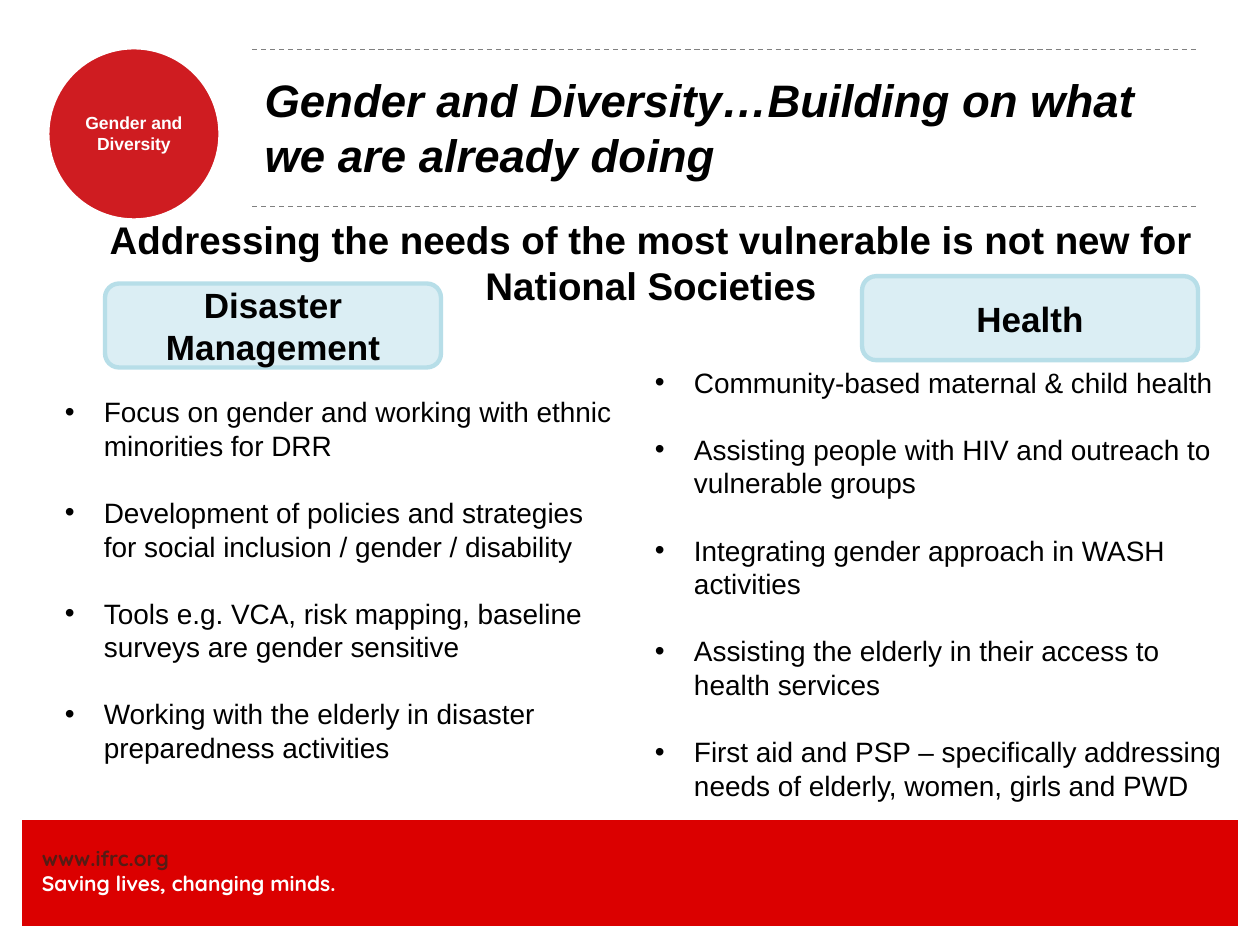
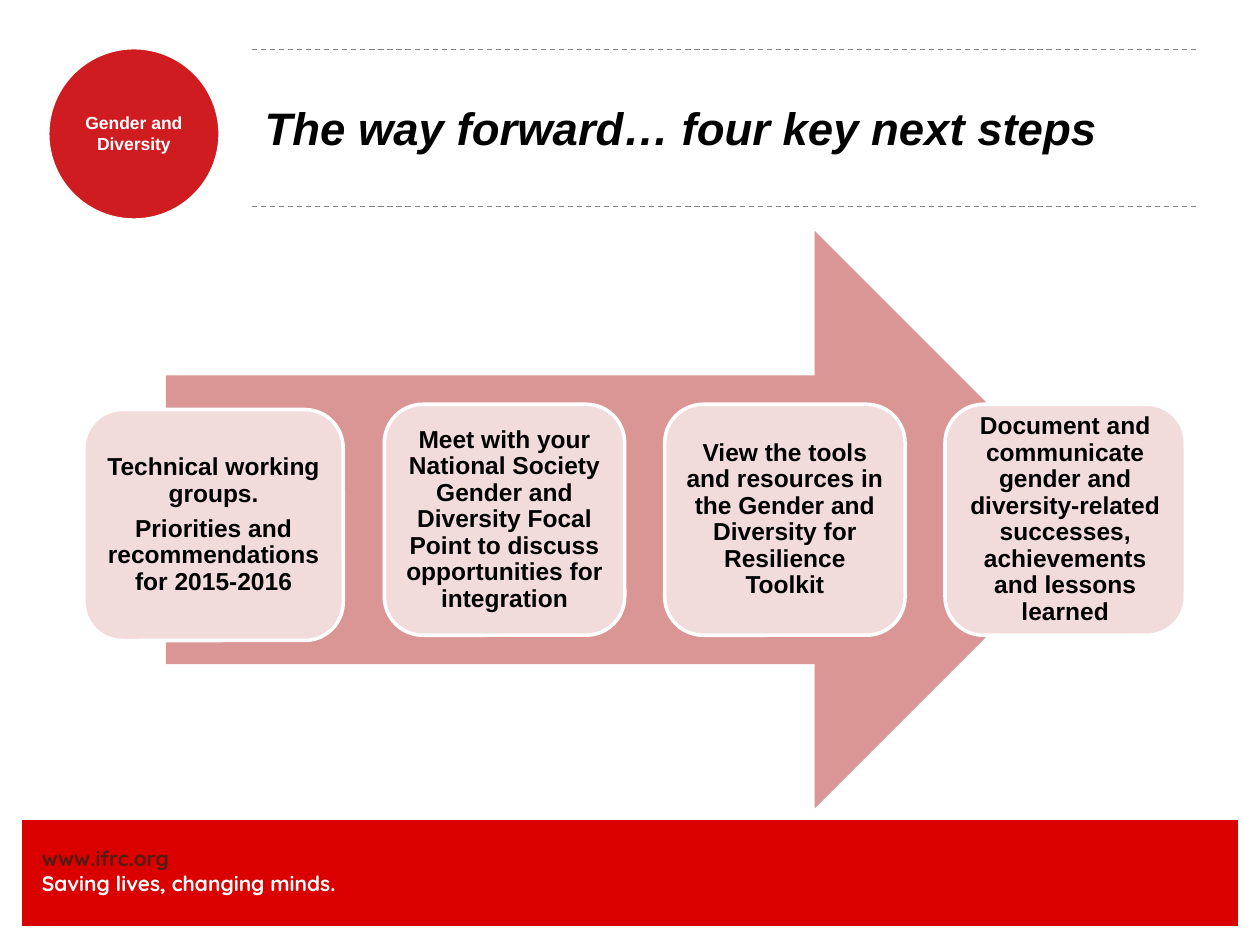
from dataclasses import dataclass

from lxml import etree
from pptx import Presentation
from pptx.dml.color import RGBColor
from pptx.enum.dml import MSO_LINE
from pptx.enum.shapes import MSO_CONNECTOR, MSO_SHAPE
from pptx.enum.text import MSO_ANCHOR, MSO_AUTO_SIZE, PP_ALIGN
from pptx.oxml.ns import qn
from pptx.util import Inches, Pt

RECT, OVAL = MSO_SHAPE.RECTANGLE, MSO_SHAPE.OVAL
ROUNDED, ARROW = MSO_SHAPE.ROUNDED_RECTANGLE, MSO_SHAPE.RIGHT_ARROW
LEFT, CENTER = PP_ALIGN.LEFT, PP_ALIGN.CENTER
TOP, MIDDLE = MSO_ANCHOR.TOP, MSO_ANCHOR.MIDDLE

WIDTH, HEIGHT = Inches(10), Inches(7.5)
COLS, ROWS = 120, 90
TITLE_AND_BODY, TITLE_ONLY = 1, 5

BLACK, WHITE, GREY = "000000", "FFFFFF", "808080"
BAND_RED, BADGE_RED, LINK_BROWN = "DB0000", "CF1C21", "551C15"
HEAD_FILL, HEAD_LINE = "DBEEF4", "B7DEE8"
ARROW_FILL, STEP_FILL = "D99694", "F2DCDB"


@dataclass(frozen=True)
class Box:
    """A place on the grid, in columns and rows."""
    col: float
    row: float
    cols: float
    rows: float

    def lengths(self) -> tuple:
        return (x(self.col), y(self.row), x(self.cols), y(self.rows))


@dataclass(frozen=True)
class Style:
    size: float
    color: str = BLACK
    bold: bool = True
    italic: bool = False
    font: str = "Arial"
    align: int = LEFT


@dataclass(frozen=True)
class Topic:
    name: str
    head: Box
    area: Box
    points: tuple


TITLE = Style(26, italic=True)
SUBTITLE = Style(22, align=CENTER)
HEAD = Style(20, align=CENTER)
POINT = Style(16, bold=False)
STEP = Style(14, align=CENTER)
BADGE = Style(10, WHITE, align=CENTER)
LINK = Style(12, LINK_BROWN, font="Quicksand")
MOTTO = Style(12, WHITE, font="Quicksand")

TITLE_BOX = Box(24, 4.6, 90, 15)
SUBTITLE_BOX = Box(7, 20, 110, 56)
RULE_ROWS = (4.7, 19.7)

TOPICS = (
    Topic("Disaster Management", Box(10, 27, 32, 8), Box(5, 37, 55, 40), (
        "Focus on gender and working with ethnic minorities for DRR",
        "Development of policies and strategies for social inclusion / gender / disability",
        "Tools e.g. VCA, risk mapping, baseline surveys are gender sensitive",
        "Working with the elderly in disaster preparedness activities",
    )),
    Topic("Health", Box(82.1, 26.3, 32, 8), Box(61.2, 34.2, 56.9, 53), (
        "Community-based maternal & child health",
        "Assisting people with HIV and outreach to vulnerable groups",
        "Integrating gender approach in WASH activities",
        "Assisting the elderly in their access to health services",
        "First aid and PSP – specifically addressing needs of elderly, women, girls and PWD",
    )),
)

FIRST_STEP = Box(8, 39, 24.7, 22)
FIRST_STEP_TEXT = ("Technical working groups.",
                   "Priorities and recommendations for 2015-2016")
NEXT_STEPS = (
    "Meet with your National Society Gender and Diversity Focal Point "
    "to discuss opportunities for integration",
    "View the tools and resources in the Gender and Diversity for Resilience Toolkit",
    "Document and communicate gender and diversity-related successes, "
    "achievements and lessons learned",
)
NEXT_COL, NEXT_ROW, NEXT_WIDTH, NEXT_PITCH = 36.6, 38.5, 22.9, 26.7


def x(cols: float) -> int:
    return round(WIDTH * cols / COLS)


def y(rows: float) -> int:
    return round(HEIGHT * rows / ROWS)


def rgb(color: str) -> RGBColor:
    return RGBColor.from_string(color)


def set_bullet(p, char: str = "", indent: float = 0) -> None:
    """Give the paragraph a hanging bullet, or none when char is empty."""
    pPr = p._p.get_or_add_pPr()
    pPr.set("marL", str(Inches(indent)))
    pPr.set("indent", str(-Inches(indent)))
    if char:
        etree.SubElement(pPr, qn("a:buFont")).set("typeface", "Arial")
        etree.SubElement(pPr, qn("a:buChar")).set("char", char)
    else:
        etree.SubElement(pPr, qn("a:buNone"))


def setup_frame(tf, anchor: int = TOP, inset: float | None = None) -> None:
    tf.word_wrap = True
    tf.auto_size = MSO_AUTO_SIZE.NONE
    tf.vertical_anchor = anchor
    if inset is not None:
        tf.margin_left = tf.margin_right = Inches(inset)
        tf.margin_top = tf.margin_bottom = Inches(inset)


def write(tf, lines: list, bullet: str = "", before: float = 0,
          after: float = 0, spacing: float | None = None) -> None:
    """Fill a frame with (text, style) lines, one paragraph each."""
    for i, (text, style) in enumerate(lines):
        p = tf.add_paragraph() if i else tf.paragraphs[0]
        p.alignment = style.align
        p.space_before = Pt(before if i else 0)
        p.space_after = Pt(after)
        if spacing:
            p.line_spacing = spacing
        set_bullet(p, bullet, 0.31 if bullet else 0)
        r = p.add_run()
        r.text = text
        r.font.name, r.font.size = style.font, Pt(style.size)
        r.font.bold, r.font.italic = style.bold, style.italic
        r.font.color.rgb = rgb(style.color)


def add_shape(slide, kind: int, box: Box, fill: str,
              line: str = "", weight: float = 0):
    sp = slide.shapes.add_shape(kind, *box.lengths())
    sp.shadow.inherit = False
    sp.fill.solid()
    sp.fill.fore_color.rgb = rgb(fill)
    if line:
        sp.line.color.rgb = rgb(line)
        sp.line.width = Pt(weight)
    else:
        sp.line.fill.background()
    return sp


def add_text(slide, box: Box, inset: float | None = None):
    tf = slide.shapes.add_textbox(*box.lengths()).text_frame
    setup_frame(tf, inset=inset)
    return tf


def fill_placeholder(sp, box: Box, text: str, style: Style, anchor: int) -> None:
    sp.left, sp.top, sp.width, sp.height = box.lengths()
    setup_frame(sp.text_frame, anchor)
    write(sp.text_frame, [(text, style)])


def add_rule(slide, row: float) -> None:
    left, right = TITLE_BOX.col, TITLE_BOX.col + TITLE_BOX.cols
    cxn = slide.shapes.add_connector(
        MSO_CONNECTOR.STRAIGHT, x(left), y(row), x(right), y(row))
    cxn.line.color.rgb = rgb(GREY)
    cxn.line.width = Pt(0.75)
    cxn.line.dash_style = MSO_LINE.DASH
    etree.SubElement(cxn._element.spPr, qn("a:effectLst"))


def start_slide(prs, layout: int, title: str):
    """Add a slide with the band, badge, rules and title all slides share."""
    slide = prs.slides.add_slide(prs.slide_layouts[layout])
    fill_placeholder(slide.shapes.title, TITLE_BOX, title, TITLE, MIDDLE)
    add_shape(slide, RECT, Box(2, 78, 116, 10.3), BAND_RED, WHITE, 0.75)
    write(add_text(slide, Box(4, 80.5, 41, 4.8), 0),
          [("www.ifrc.org", LINK), ("Saving lives, changing minds.", MOTTO)])
    add_shape(slide, OVAL, Box(4.5, 4.5, 16.5, 16.5), BADGE_RED, WHITE, 2.5)
    write(add_text(slide, Box(6.6, 10.7, 12.3, 4.1), 0),
          [("Gender and Diversity", BADGE)])
    for row in RULE_ROWS:
        add_rule(slide, row)
    return slide


def add_topic(slide, topic: Topic) -> None:
    tf = add_shape(slide, ROUNDED, topic.head, HEAD_FILL, HEAD_LINE, 2.5).text_frame
    setup_frame(tf, MIDDLE)
    write(tf, [(topic.name, HEAD)])
    write(add_text(slide, topic.area), [(point, POINT) for point in topic.points],
          bullet="•", before=19.2)


def add_step(slide, box: Box, texts: tuple) -> None:
    tf = add_shape(slide, ROUNDED, box, STEP_FILL, WHITE, 2).text_frame
    setup_frame(tf, MIDDLE, 0.06)
    write(tf, [(text, STEP) for text in texts], after=4.9, spacing=0.9)


def build_topics_slide(prs) -> None:
    slide = start_slide(prs, TITLE_AND_BODY,
                        "Gender and Diversity…Building on what we are already doing")
    fill_placeholder(
        slide.placeholders[1], SUBTITLE_BOX,
        "Addressing the needs of the most vulnerable is not new for National Societies",
        SUBTITLE, TOP)
    for topic in TOPICS:
        add_topic(slide, topic)


def build_steps_slide(prs) -> None:
    slide = start_slide(prs, TITLE_ONLY, "The way forward… four key next steps")
    add_shape(slide, ARROW, Box(15.8, 22, 89.3, 55), ARROW_FILL)
    add_step(slide, FIRST_STEP, FIRST_STEP_TEXT)
    for i, text in enumerate(NEXT_STEPS):
        col = NEXT_COL + i * NEXT_PITCH
        add_step(slide, Box(col, NEXT_ROW, NEXT_WIDTH, FIRST_STEP.rows), (text,))


def main() -> None:
    prs = Presentation()
    prs.slide_width, prs.slide_height = WIDTH, HEIGHT
    build_topics_slide(prs)
    build_steps_slide(prs)
    prs.save("out.pptx")


if __name__ == "__main__":
    main()
